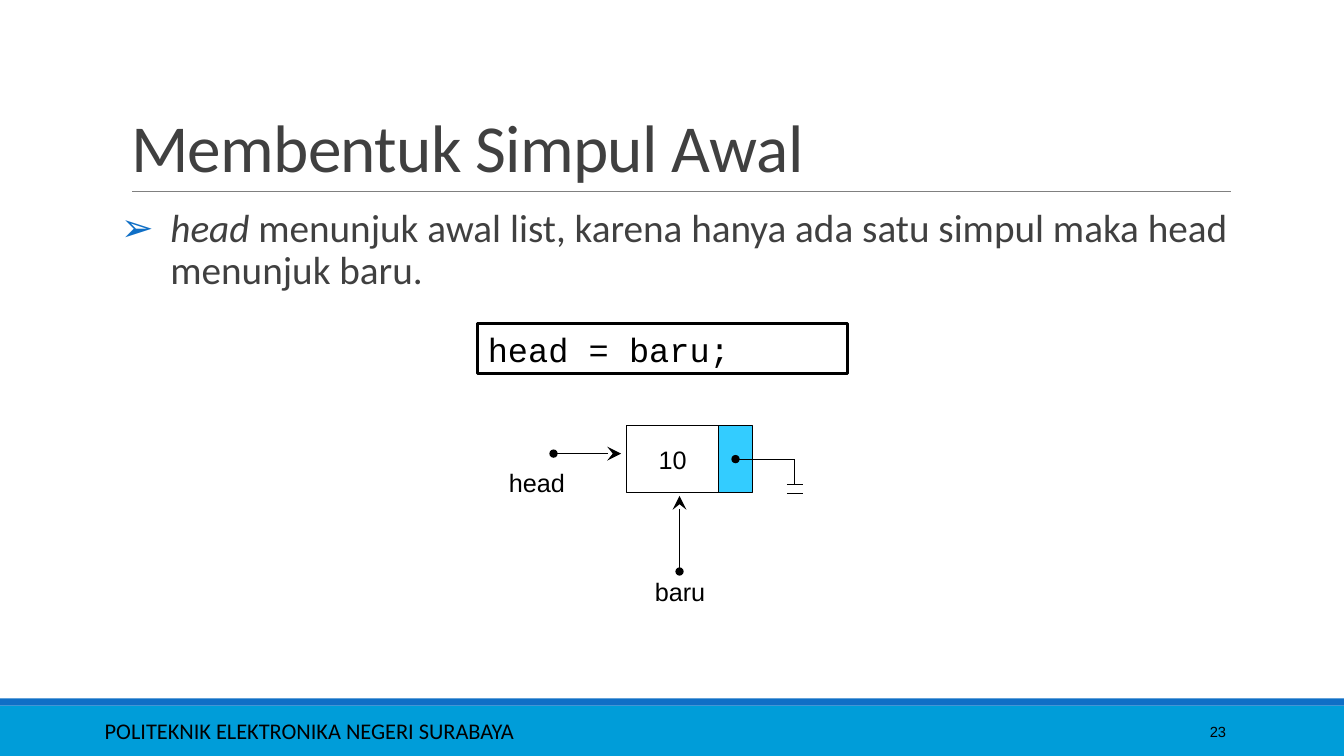
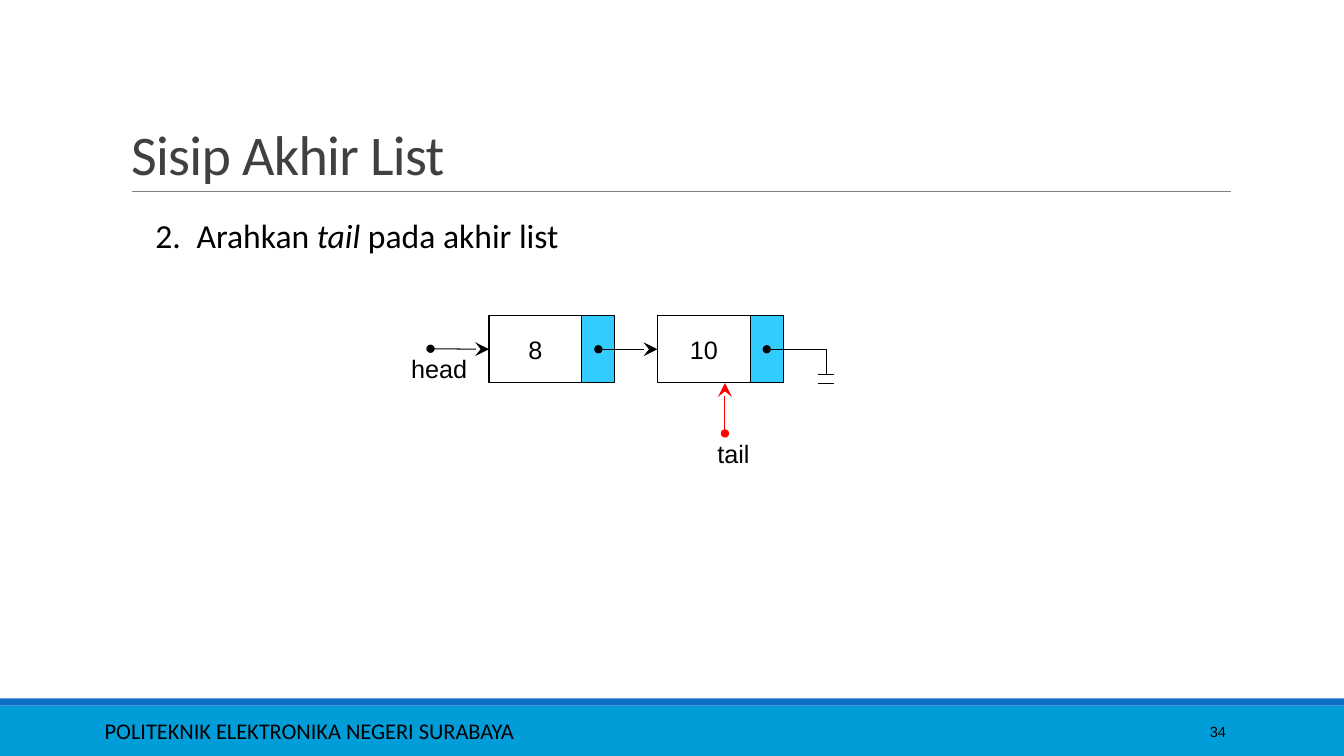
"""Two lecture slides on linked lists: forming the first node and inserting at the end."""
from lxml import etree
from pptx import Presentation
from pptx.dml.color import RGBColor
from pptx.enum.shapes import MSO_CONNECTOR, MSO_SHAPE
from pptx.enum.text import MSO_ANCHOR as ANCHOR, MSO_AUTO_SIZE as AUTO, PP_ALIGN as ALIGN
from pptx.oxml.ns import qn
from pptx.util import Inches, Pt

COLORS = {
    "band": "009DD9", "stripe": "0F6FC6", "rule": "808080", "title": "404040",
    "black": "000000", "pointer": "33CCFF", "red": "FF0000",
}
FOOTER = "POLITEKNIK ELEKTRONIKA NEGERI SURABAYA"
BANDS = [("band", 7, 0.5), ("stripe", 6.93, 0.07)]
SLIDES = [
    {
        "title": "Membentuk Simpul Awal", "title_size": 48, "number": "23",
        "body": [("head ", True),
                 ("menunjuk awal list, karena hanya ada satu simpul maka head menunjuk baru.", False)],
        "body_box": (1.2, 2.02, 11, 4.4), "body_side": 0, "body_size": 28,
        "body_color": "title", "body_spacing": 0.9, "indent": 0.49,
        "bullet": ("a:buChar", {"char": "➢"}), "bullet_color": "stripe",
        "code": "head = baru;",
        "nodes": ["10"], "nodes_at": (6.21, 4.22),
        "arrows": [((5.49, 4.5), (6.16, 4.5), "black", None),
                   ((6.74, 5.67), (6.74, 4.92), "black", None)],
        "labels": [("head", 4.74, 4.59), ("baru", 6.16, 5.67)],
    },
    {
        "title": "Sisip Akhir List", "title_size": 40, "number": "34",
        "body": [("Arahkan ", False), ("tail ", True), ("pada akhir list", False)],
        "body_box": (1.44, 2.08, 4.67, 0.5), "body_side": 0.1, "body_size": 24,
        "body_color": "black", "body_spacing": 1, "indent": 0.41,
        "bullet": ("a:buAutoNum", {"type": "arabicPeriod", "startAt": "2"}), "bullet_color": "black",
        "code": None,
        "nodes": ["8", "10"], "nodes_at": (4.85, 3.13),
        "arrows": [((4.27, 3.46), (4.85, 3.46), "black", 0),
                   ((7.19, 4.3), (7.19, 3.8), "red", None)],
        "labels": [("head", 3.77, 3.46), ("tail", 6.69, 4.3)],
    },
]
VALUE_W, POINTER_W, NODE_H, NODE_PITCH = 0.92, 0.33, 0.67, 1.67


def rgb(name):
    return RGBColor.from_string(COLORS[name])


def place(sp, left, top, width, height):
    sp.left, sp.top, sp.width, sp.height = map(Inches, (left, top, width, height))


def write(tf, text, size, font="Calibri", color="black", align=ALIGN.LEFT,
          anchor=ANCHOR.TOP, spacing=1, side=0.1, tracking=None):
    runs = [(text, False)] if isinstance(text, str) else text
    tf.word_wrap, tf.auto_size, tf.vertical_anchor = True, AUTO.NONE, anchor
    tf.margin_left = tf.margin_right = Inches(side)
    p = tf.paragraphs[0]
    p.alignment, p.line_spacing = align, spacing
    p.space_before = Pt(0)
    for part, italic in runs:
        r = p.add_run()
        r.text = part
        r.font.name, r.font.size, r.font.italic = font, Pt(size), italic
        r.font.color.rgb = rgb(color)
        if tracking is not None:
            r._r.get_or_add_rPr().set("spc", str(tracking))
    return p


def add_text(slide, box, text, size, **fmt):
    sp = slide.shapes.add_textbox(*map(Inches, box))
    write(sp.text_frame, text, size, **fmt)
    return sp


def add_box(slide, box, fill=None, line=None, width=0.75):
    sp = slide.shapes.add_shape(MSO_SHAPE.RECTANGLE, *map(Inches, box))
    sp.shadow.inherit = False
    if fill:
        sp.fill.solid()
        sp.fill.fore_color.rgb = rgb(fill)
    else:
        sp.fill.background()
    if line:
        sp.line.color.rgb = rgb(line)
        sp.line.width = Pt(width)
    else:
        sp.line.fill.background()
    return sp


def add_line(slide, start, end, color="black", width=0.75, dot=False, arrow=False, target=None):
    c = slide.shapes.add_connector(MSO_CONNECTOR.STRAIGHT, *map(Inches, (*start, *end)))
    c.line.color.rgb = rgb(color)
    c.line.width = Pt(width)
    ln = c.line._get_or_add_ln()
    if dot:
        etree.SubElement(ln, qn("a:headEnd"), type="oval")
    if arrow:
        etree.SubElement(ln, qn("a:tailEnd"), type="stealth", w="lg", len="lg")
    etree.SubElement(c._element.spPr, qn("a:effectLst"))
    if target is not None:
        c.end_connect(target, 1)
    return c


def add_bullet(p, tag, attributes, color, indent):
    pPr = p._p.get_or_add_pPr()
    pPr.set("marL", str(Inches(indent)))
    pPr.set("indent", str(-Inches(indent)))
    clr = etree.SubElement(pPr, qn("a:buClr"))
    etree.SubElement(clr, qn("a:srgbClr"), val=COLORS[color])
    etree.SubElement(pPr, qn(tag), attributes)


def add_list(slide, values, left, top):
    """Draw linked nodes ending in a null symbol and return the value boxes."""
    middle = top + NODE_H / 2
    boxes = []
    for i, value in enumerate(values):
        x = left + i * NODE_PITCH
        sp = add_box(slide, (x, top, VALUE_W, NODE_H), line="black")
        write(sp.text_frame, value, 18, font="Arial", align=ALIGN.CENTER, anchor=ANCHOR.MIDDLE)
        add_box(slide, (x + VALUE_W, top, POINTER_W, NODE_H), fill="pointer", line="black")
        boxes.append(sp)
    dots = [left + i * NODE_PITCH + VALUE_W + POINTER_W / 2 for i in range(len(values))]
    for dot_x, box in zip(dots, boxes[1:]):
        add_line(slide, (dot_x, middle), (dot_x + 0.58, middle), dot=True, arrow=True, target=box)
    x, y = dots[-1] + 0.59, middle + 0.25
    add_line(slide, (dots[-1], middle), (x, middle), dot=True)
    add_line(slide, (x, middle), (x, y))
    for bar_y in (y, y + 0.09):
        add_line(slide, (x - 0.08, bar_y), (x + 0.08, bar_y))
    return boxes


def style_layout(layout, slide):
    """Put the bands, rule, footer and title position on the layout."""
    for ph in list(layout.placeholders):
        if ph.placeholder_format.idx >= 10:
            ph.element.getparent().remove(ph.element)
    place(layout.placeholders[0], 1.2, 0.31, 11, 1.59)
    parts = [add_box(slide, (0, top, 13.33, height), fill=color) for color, top, height in BANDS]
    parts.append(add_line(slide, (1.31, 1.9), (12.21, 1.9), color="rule", width=0.5))
    parts.append(add_text(slide, (0.94, 7.05, 8.41, 0.4), FOOTER, 16, anchor=ANCHOR.MIDDLE))
    for sp in parts:
        layout.shapes.element.append(sp._element)


def fill_slide(slide, data):
    write(slide.shapes.title.text_frame, data["title"], data["title_size"], color="title",
          anchor=ANCHOR.BOTTOM, spacing=0.85, tracking=-50)
    body = slide.placeholders[1]
    place(body, *data["body_box"])
    p = write(body.text_frame, data["body"], data["body_size"], color=data["body_color"],
              spacing=data["body_spacing"], side=data["body_side"])
    add_bullet(p, *data["bullet"], data["bullet_color"], data["indent"])
    add_text(slide, (10.83, 7.06, 1.43, 0.4), data["number"], 10.5, font="Arial",
             align=ALIGN.RIGHT, anchor=ANCHOR.MIDDLE)
    if data["code"]:
        sp = add_box(slide, (4.74, 3.21, 3.67, 0.5), line="black", width=2.25)
        write(sp.text_frame, data["code"], 24, font="Courier New")
    boxes = add_list(slide, data["nodes"], *data["nodes_at"])
    for start, end, color, node in data["arrows"]:
        target = None if node is None else boxes[node]
        add_line(slide, start, end, color=color, dot=True, arrow=True, target=target)
    for text, left, top in data["labels"]:
        add_text(slide, (left, top, 1.17, 0.4), text, 18, font="Arial", align=ALIGN.CENTER)


def main():
    prs = Presentation()
    prs.slide_width, prs.slide_height = Inches(13.33), Inches(7.5)
    layout = prs.slide_layouts[1]
    slides = [prs.slides.add_slide(layout) for _ in SLIDES]
    style_layout(layout, slides[0])
    for slide, data in zip(slides, SLIDES):
        fill_slide(slide, data)
    prs.save("out.pptx")


if __name__ == "__main__":
    main()
